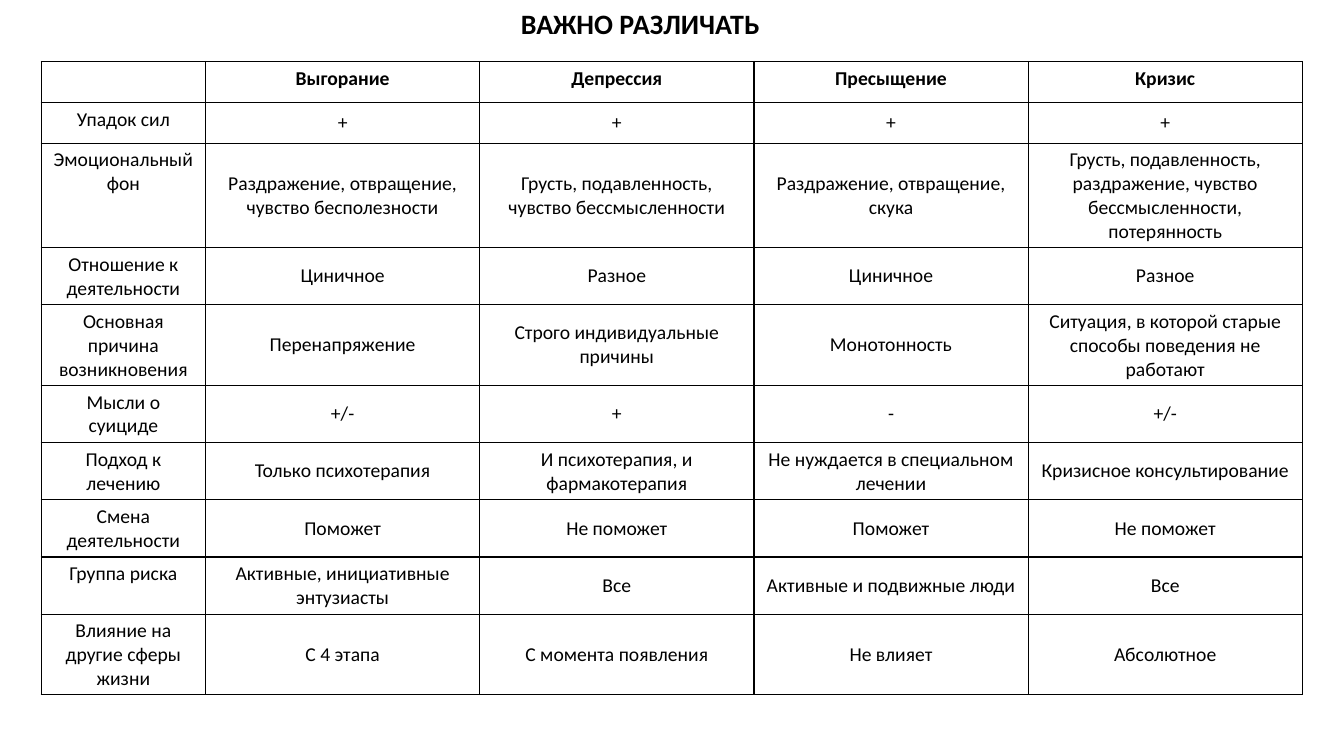
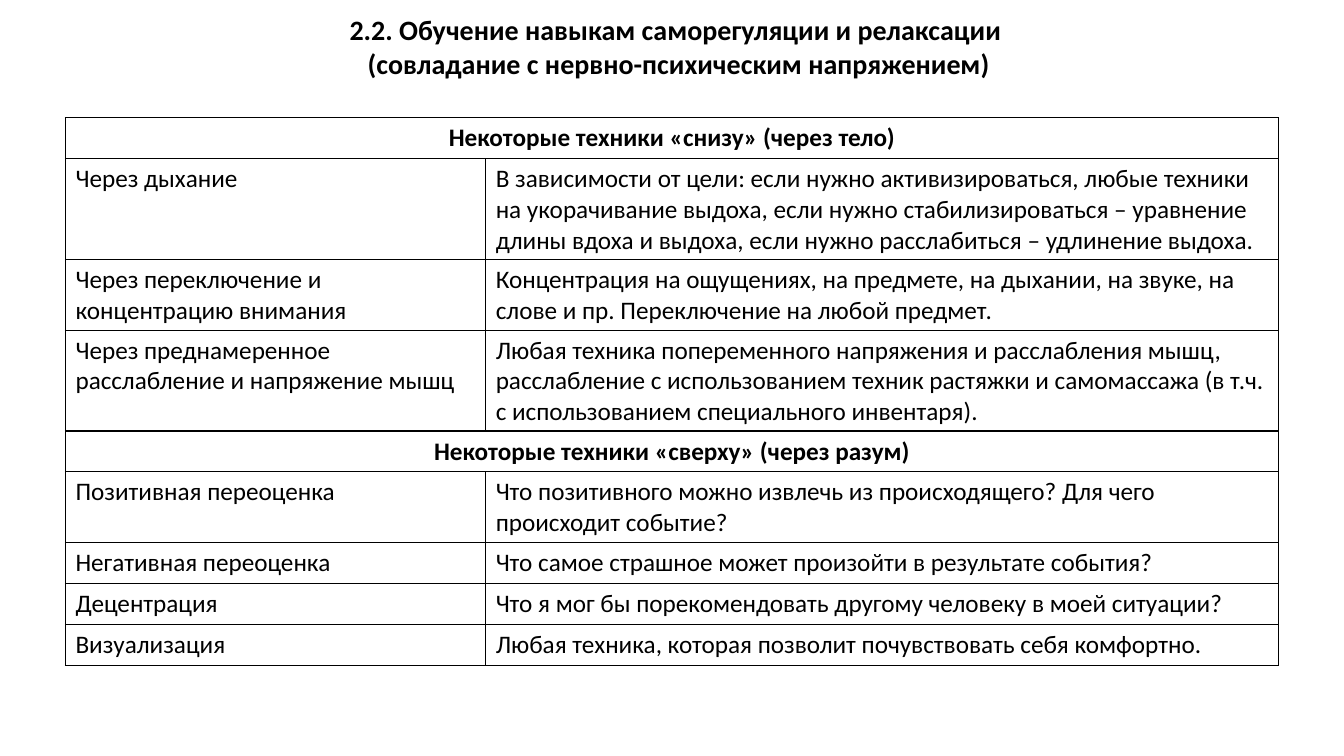
from dataclasses import dataclass

from lxml import etree
from pptx import Presentation
from pptx.dml.color import RGBColor
from pptx.enum.text import MSO_ANCHOR, MSO_AUTO_SIZE, PP_ALIGN
from pptx.oxml.ns import qn
from pptx.util import Cm, Pt

LEFT, CENTER = PP_ALIGN.LEFT, PP_ALIGN.CENTER
TOP, MIDDLE = MSO_ANCHOR.TOP, MSO_ANCHOR.MIDDLE
FIT_SHAPE = MSO_AUTO_SIZE.SHAPE_TO_FIT_TEXT


@dataclass(frozen=True)
class Theme:
    font: str = "Calibri"
    ink: str = "000000"
    title_size: int = 20
    comparison_size: int = 14
    techniques_size: int = 18
    border_width: int = 1
    row_height: float = 1.03


THEME = Theme()

# Content: how the four states differ
COMPARISON_TITLE = ["ВАЖНО РАЗЛИЧАТЬ"]
COMPARISON = [
    ("", "Выгорание", "Депрессия", "Пресыщение", "Кризис"),
    ("Упадок сил", "+", "+", "+", "+"),
    ("Эмоциональный фон",
     "Раздражение, отвращение, чувство бесполезности",
     "Грусть, подавленность, чувство бессмысленности",
     "Раздражение, отвращение, скука",
     "Грусть, подавленность, раздражение, чувство бессмысленности, потерянность"),
    ("Отношение к деятельности", "Циничное", "Разное", "Циничное", "Разное"),
    ("Основная причина возникновения", "Перенапряжение",
     "Строго индивидуальные причины", "Монотонность",
     "Ситуация, в которой старые способы поведения не работают"),
    ("Мысли о суициде", "+/-", "+", "-", "+/-"),
    ("Подход к лечению", "Только психотерапия",
     "И психотерапия, и фармакотерапия",
     "Не нуждается в специальном лечении", "Кризисное консультирование"),
    ("Смена деятельности", "Поможет", "Не поможет", "Поможет", "Не поможет"),
    ("Группа риска", "Активные, инициативные энтузиасты", "Все",
     "Активные и подвижные люди", "Все"),
    ("Влияние на другие сферы жизни", "С 4 этапа", "С момента появления",
     "Не влияет", "Абсолютное"),
]

# Content: techniques; a row with one item is a section heading
TECHNIQUES_TITLE = [
    "2.2. Обучение навыкам саморегуляции и релаксации ",
    "(совладание с нервно-психическим напряжением)",
]
TECHNIQUES = [
    ("Некоторые техники «снизу» (через тело)",),
    ("Через дыхание",
     "В зависимости от цели: если нужно активизироваться, любые техники на "
     "укорачивание выдоха, если нужно стабилизироваться – уравнение длины вдоха "
     "и выдоха, если нужно расслабиться – удлинение выдоха."),
    ("Через переключение и концентрацию внимания",
     "Концентрация на ощущениях, на предмете, на дыхании, на звуке, на слове и "
     "пр. Переключение на любой предмет."),
    ("Через преднамеренное расслабление и напряжение мышц",
     "Любая техника попеременного напряжения и расслабления мышц, расслабление "
     "с использованием техник растяжки и самомассажа (в т.ч. с использованием "
     "специального инвентаря)."),
    ("Некоторые техники «сверху» (через разум)",),
    ("Позитивная переоценка",
     "Что позитивного можно извлечь из происходящего? Для чего происходит событие?"),
    ("Негативная переоценка",
     "Что самое страшное может произойти в результате события?"),
    ("Децентрация",
     "Что я мог бы порекомендовать другому человеку в моей ситуации?"),
    ("Визуализация",
     "Любая техника, которая позволит почувствовать себя комфортно."),
]


# Shared text, title and table styles
def style_paragraph(paragraph, size, bold, align):
    paragraph.alignment = align
    font = paragraph.font
    font.name, font.size, font.bold = THEME.font, Pt(size), bold
    font.color.rgb = RGBColor.from_string(THEME.ink)


def add_title(slide, lines, box, align, wrap):
    frame = slide.shapes.add_textbox(*(Cm(length) for length in box)).text_frame
    frame.word_wrap = wrap
    frame.auto_size = FIT_SHAPE
    frame.text = "\n".join(lines)
    for paragraph in frame.paragraphs:
        style_paragraph(paragraph, THEME.title_size, True, align)


def add_borders(cell):
    properties = cell._tc.get_or_add_tcPr()
    for index, side in enumerate(("a:lnL", "a:lnR", "a:lnT", "a:lnB")):
        line = etree.Element(qn(side), w=str(Pt(THEME.border_width)))
        fill = etree.SubElement(line, qn("a:solidFill"))
        etree.SubElement(fill, qn("a:srgbClr"), val=THEME.ink)
        properties.insert(index, line)


def fill_cell(cell, text, size, bold, align, anchor):
    cell.text = text
    cell.vertical_anchor = anchor
    style_paragraph(cell.text_frame.paragraphs[0], size, bold, align)


def add_grid(slide, left, top, widths, row_count):
    table = slide.shapes.add_table(
        row_count, len(widths), Cm(left), Cm(top),
        Cm(sum(widths)), Cm(THEME.row_height * row_count)).table
    table.first_row = table.horz_banding = False
    for column, width in zip(table.columns, widths):
        column.width = Cm(width)
    for row in table.rows:
        row.height = Cm(THEME.row_height)
    for cell in table.iter_cells():
        cell.fill.background()
        add_borders(cell)
    return table


# Slides
def build_comparison(slide):
    add_title(slide, COMPARISON_TITLE, (12.88, 0.03, 6.58, 1.11), LEFT, False)
    table = add_grid(slide, 1.04, 1.55, [4.14] + [6.91] * 4, len(COMPARISON))
    for r, row in enumerate(COMPARISON):
        for c, text in enumerate(row):
            anchor = MIDDLE if r and c else TOP
            fill_cell(table.cell(r, c), text, THEME.comparison_size,
                      r == 0, CENTER, anchor)


def build_techniques(slide):
    add_title(slide, TECHNIQUES_TITLE, (4.95, 0.2, 24.31, 1.96), CENTER, True)
    table = add_grid(slide, 1.65, 2.97, [10.59, 19.98], len(TECHNIQUES))
    for r, row in enumerate(TECHNIQUES):
        heading = len(row) == 1
        if heading:
            table.cell(r, 0).merge(table.cell(r, 1))
        for c, text in enumerate(row):
            fill_cell(table.cell(r, c), text, THEME.techniques_size, heading,
                      CENTER if heading else LEFT, TOP if r else MIDDLE)


def main():
    deck = Presentation()
    deck.slide_width, deck.slide_height = Cm(33.87), Cm(19.05)
    blank = deck.slide_layouts[6]
    for build in (build_comparison, build_techniques):
        build(deck.slides.add_slide(blank))
    deck.save("out.pptx")


if __name__ == "__main__":
    main()
